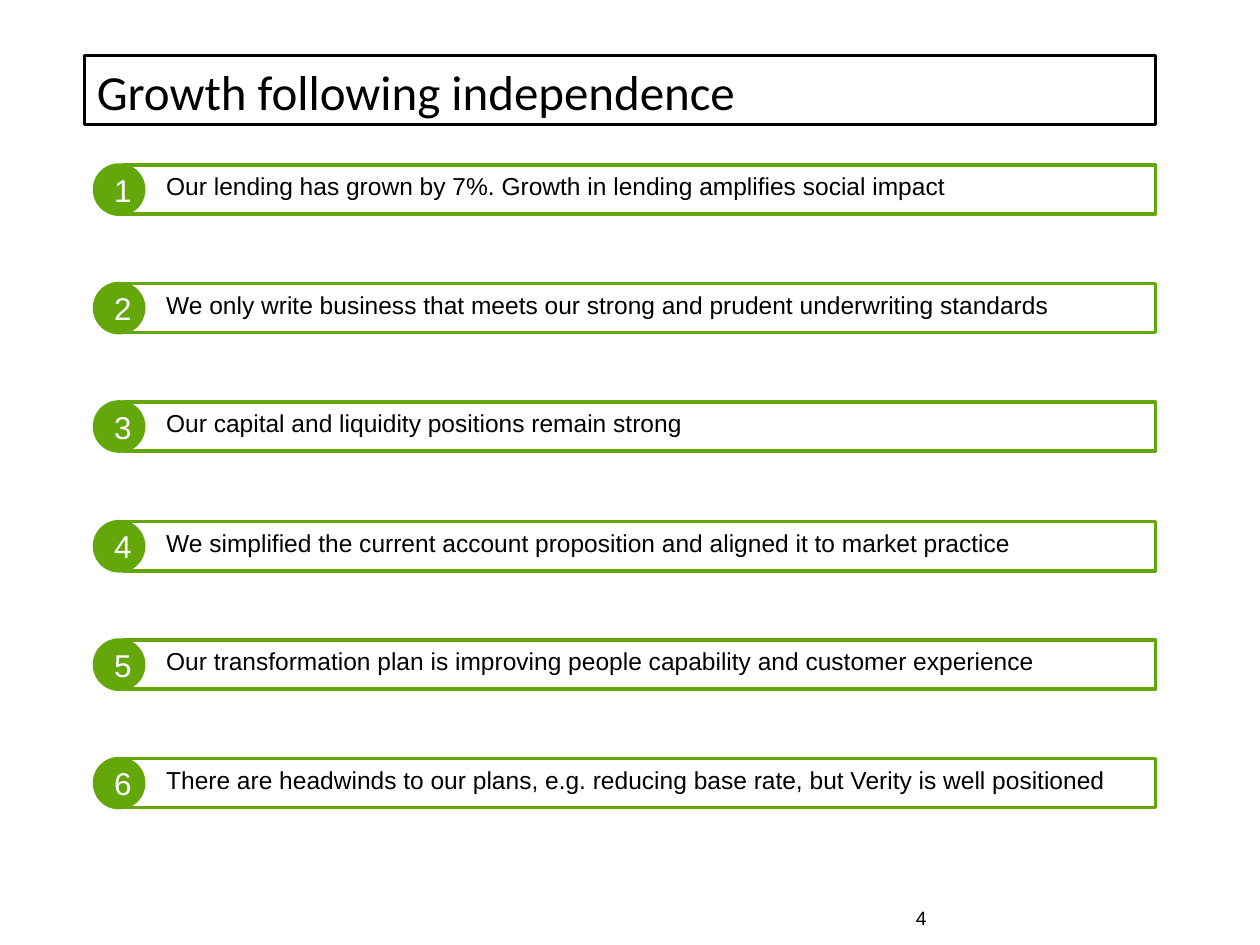
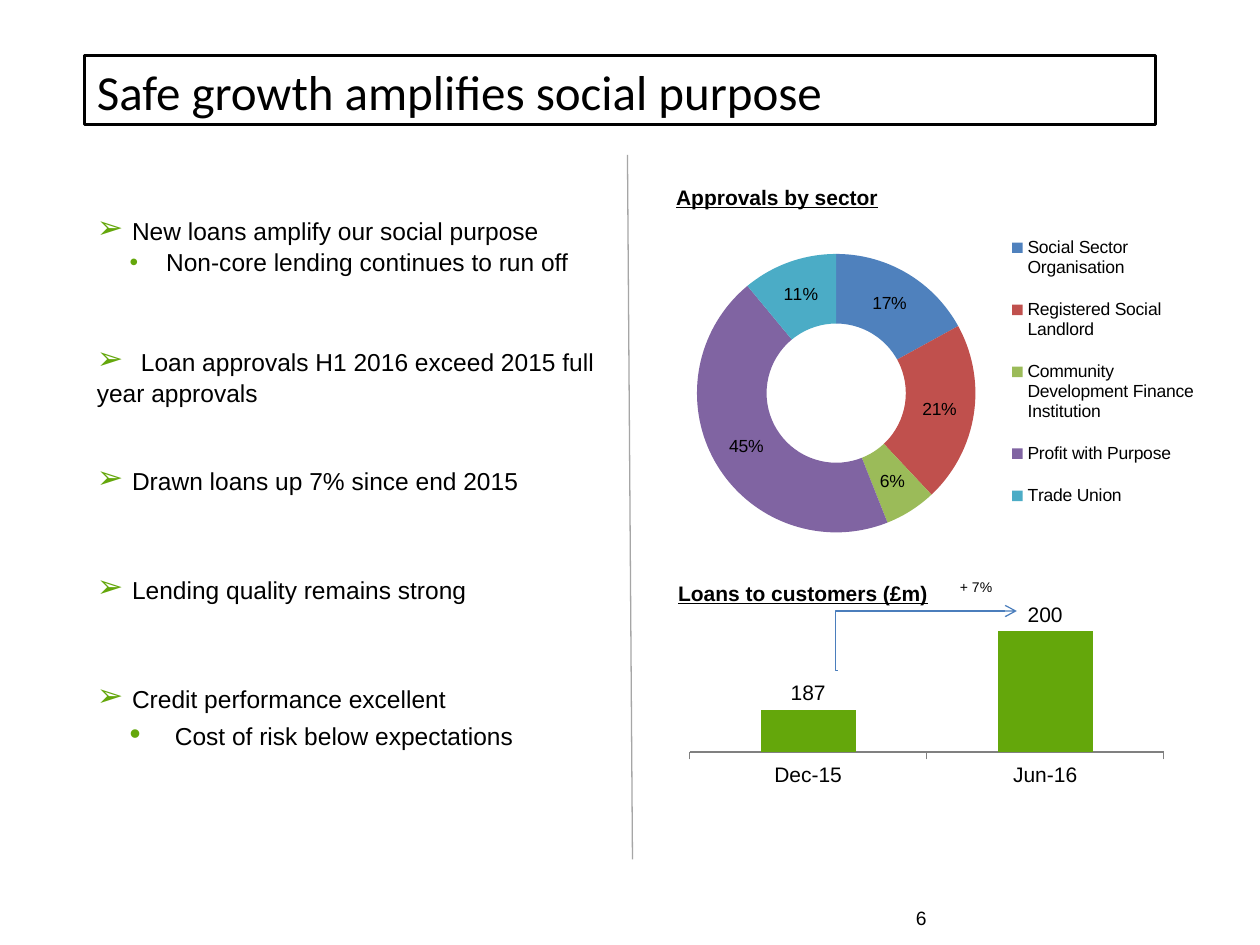
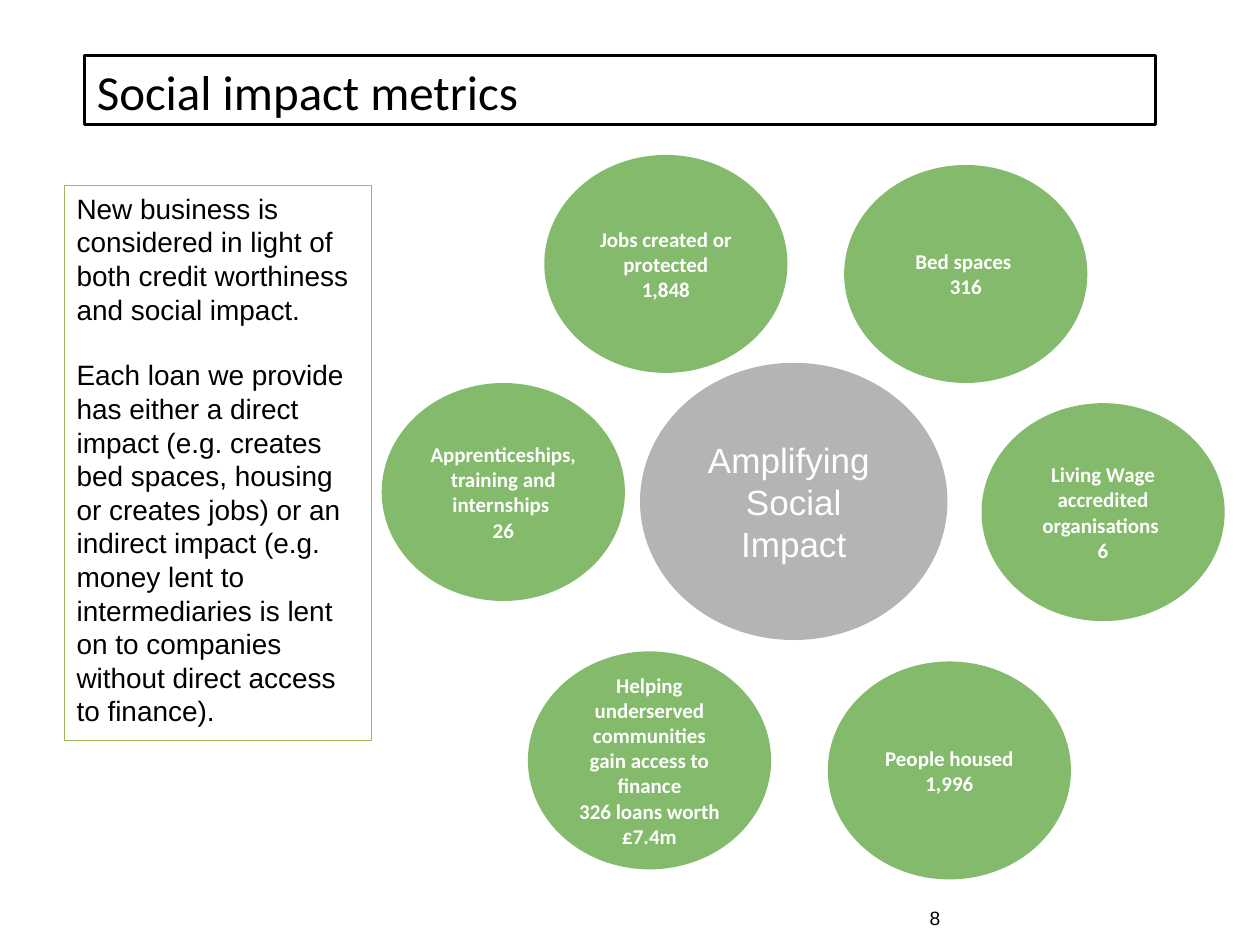
from pptx import Presentation
from pptx import util as u
from pptx.chart.data import CategoryChartData
from pptx.dml.color import RGBColor
from pptx.enum import chart as charts, shapes, text
from pptx.oxml.ns import qn
from pptx.oxml.xmlchemy import OxmlElement

EMU_PER_PX = 9144  # 100 px to the inch

BLACK = RGBColor(0x00, 0x00, 0x00)
WHITE = RGBColor(0xFF, 0xFF, 0xFF)
GREEN = RGBColor(0x64, 0xA7, 0x0B)
BUBBLE_GREEN = RGBColor(0x63, 0xA8, 0x44)
BUBBLE_GREY = RGBColor(0xA7, 0xA8, 0xAA)
FRAME_GREEN = RGBColor(0x9B, 0xBB, 0x59)
DIVIDER_GREY = RGBColor(0xA6, 0xA6, 0xA6)
AXIS_GREY = RGBColor(0x80, 0x80, 0x80)
ARROW_BLUE = RGBColor(0x4B, 0x7E, 0xBC)
SECTOR_COLOURS = [
    RGBColor(0x4F, 0x81, 0xBD),
    RGBColor(0xC0, 0x50, 0x4D),
    RGBColor(0x9B, 0xBB, 0x59),
    RGBColor(0x80, 0x64, 0xA2),
    RGBColor(0x4B, 0xAC, 0xC6),
]

RECTANGLE = shapes.MSO_SHAPE.RECTANGLE
OVAL = shapes.MSO_SHAPE.OVAL
CENTER = text.PP_ALIGN.CENTER
MIDDLE = text.MSO_ANCHOR.MIDDLE


def px(length):
    return u.Emu(round(length * EMU_PER_PX))


def add_element(parent, tag, **attributes):
    element = OxmlElement(tag)
    for name, value in attributes.items():
        element.set(name, str(value))
    parent.append(element)
    return element


def place_in_chart(parent, index, x, y, width=None, height=None, inner=False):
    """Give a chart part a manual layout in fractions of the chart area."""
    for old_layout in parent.findall(qn("c:layout")):
        parent.remove(old_layout)
    layout = OxmlElement("c:layout")
    manual = add_element(layout, "c:manualLayout")
    if inner:
        add_element(manual, "c:layoutTarget", val="inner")
    add_element(manual, "c:xMode", val="edge")
    add_element(manual, "c:yMode", val="edge")
    for tag, value in (("x", x), ("y", y), ("w", width), ("h", height)):
        if value is not None:
            add_element(manual, f"c:{tag}", val=value)
    parent.insert(index, layout)


class Deck:
    body_font = "Arial"
    title_font = "Calibri"

    def __init__(self):
        self.presentation = Presentation()
        self.presentation.slide_width = px(1000)
        self.presentation.slide_height = px(750)
        self.slide = None

    def new_slide(self, title, number, number_left=717):
        self.slide = self.presentation.slides.add_slide(self.presentation.slide_layouts[6])
        bar = self.shape(RECTANGLE, 67, 44, 850, 55, fill=WHITE, line=BLACK)
        self.fill_text(bar, [title], 28, font=self.title_font)
        self.text_box(number_left, 714, 233, 21, [number], 11)

    def run(self, paragraph, words, size, colour=BLACK, font=body_font, bold=False):
        run = paragraph.add_run()
        run.text = words
        run.font.size = u.Pt(size)
        run.font.name = font
        run.font.bold = bold
        run.font.color.rgb = colour

    def fill_text(self, shape, lines, size, align=text.PP_ALIGN.LEFT,
                  anchor=text.MSO_ANCHOR.TOP, gap=0, **style):
        frame = shape.text_frame
        frame.word_wrap = True
        frame.vertical_anchor = anchor
        for index, line in enumerate(lines):
            paragraph = frame.add_paragraph() if index else frame.paragraphs[0]
            paragraph.alignment = align
            if index and gap:
                paragraph.space_before = u.Pt(gap)
            self.run(paragraph, line, size, **style)

    def shape(self, kind, left, top, width, height, fill=None, line=None,
              line_width=2, opacity=None):
        shape = self.slide.shapes.add_shape(kind, px(left), px(top), px(width), px(height))
        shape.shadow.inherit = False
        if fill is None:
            shape.fill.background()
        else:
            shape.fill.solid()
            shape.fill.fore_color.rgb = fill
        if opacity is not None:
            colour = shape._element.spPr.find(".//" + qn("a:srgbClr"))
            add_element(colour, "a:alpha", val=opacity * 1000)
        if line is None:
            shape.line.fill.background()
        else:
            shape.line.color.rgb = line
            shape.line.width = u.Pt(line_width)
        return shape

    def text_box(self, left, top, width, height, lines, size):
        box = self.slide.shapes.add_textbox(px(left), px(top), px(width), px(height))
        self.fill_text(box, lines, size)
        return box

    def bubble(self, left, top, width, height, lines, size, fill, opacity, **style):
        oval = self.shape(OVAL, left, top, width, height, fill=fill, opacity=opacity)
        self.fill_text(oval, lines, size, align=CENTER, anchor=MIDDLE, colour=WHITE, **style)

    def numbered_bar(self, top, number, words):
        self.shape(RECTANGLE, 98, top, 819, 39, line=GREEN)
        badge = self.shape(OVAL, 75, top, 39, 39, fill=GREEN, line=GREEN)
        self.fill_text(badge, [number], 18, align=CENTER, anchor=MIDDLE, colour=WHITE)
        self.text_box(122, top, 795, 34, [words], 14)

    def bullet(self, paragraph, mark, left=0, indent=0, tab=None):
        properties = paragraph._p.get_or_add_pPr()
        properties.set("marL", str(px(left)))
        properties.set("indent", str(px(indent)))
        colour = add_element(properties, "a:buClr")
        add_element(colour, "a:srgbClr", val=GREEN)
        add_element(properties, "a:buFont", typeface=self.body_font)
        add_element(properties, "a:buChar", char=mark)
        if tab is not None:
            stops = add_element(properties, "a:tabLst")
            add_element(stops, "a:tab", pos=px(tab), algn="l")

    def point(self, top, height, words, tab=28, detail=None, detail_lead=""):
        """Add an arrow point, with an optional detail line below it."""
        box = self.slide.shapes.add_textbox(px(67), px(top), px(417), px(height))
        frame = box.text_frame
        frame.word_wrap = True
        paragraph = frame.paragraphs[0]
        self.bullet(paragraph, "➢", tab=tab)
        self.run(paragraph, "\t", 18)
        self.run(paragraph, words, 14)
        if detail:
            paragraph = frame.add_paragraph()
            self.bullet(paragraph, "•", left=55, indent=-29)
            if detail_lead:
                self.run(paragraph, detail_lead, 18)
            self.run(paragraph, detail, 14)

    def connector(self, kind, begin, end, colour):
        line = self.slide.shapes.add_connector(kind, *map(px, begin + end))
        line.line.color.rgb = colour
        line.line.width = u.Pt(0.75)
        add_element(line._element.spPr, "a:effectLst")
        return line

    def elbow_arrow(self, begin, end, colour, bend):
        arrow = self.connector(shapes.MSO_CONNECTOR.ELBOW, begin, end, colour)
        properties = arrow._element.spPr
        guides = properties.find(".//" + qn("a:avLst"))
        add_element(guides, "a:gd", name="adj1", fmla=f"val {bend}")
        add_element(properties.find(qn("a:ln")), "a:tailEnd", type="arrow")

    def chart(self, kind, left, top, width, height, values, title, title_at, plot_at, size):
        data = CategoryChartData()
        data.categories = list(values)
        data.add_series("Series 1", list(values.values()))
        chart = self.slide.shapes.add_chart(
            kind, px(left), px(top), px(width), px(height), data).chart
        chart.font.name = self.body_font
        chart.font.size = u.Pt(size)
        chart.font.color.rgb = BLACK
        chart.has_title = True
        paragraph = chart.chart_title.text_frame.paragraphs[0]
        self.run(paragraph, title, 12, bold=True)
        paragraph.runs[0].font.underline = True
        place_in_chart(chart.chart_title._element, 1, *title_at)
        place_in_chart(chart._chartSpace.chart.plotArea, 0, *plot_at, inner=True)
        plot = chart.plots[0]
        plot.has_data_labels = True
        plot.data_labels.font.size = u.Pt(size)
        plot.data_labels.font.color.rgb = BLACK
        plot.data_labels.number_format_is_linked = False
        return chart

    def column_chart(self, *box, lowest, highest, **parts):
        chart = self.chart(charts.XL_CHART_TYPE.COLUMN_CLUSTERED, *box, size=12, **parts)
        chart.has_legend = False
        plot = chart.plots[0]
        plot.vary_by_categories = False
        plot.gap_width = 150
        plot.data_labels.show_value = True
        plot.data_labels.number_format = "#,##0"
        plot.data_labels.position = charts.XL_LABEL_POSITION.OUTSIDE_END
        fill = plot.series[0].format.fill
        fill.solid()
        fill.fore_color.rgb = GREEN
        values = chart.value_axis
        values.minimum_scale, values.maximum_scale = lowest, highest
        values.has_major_gridlines = False
        values.visible = False
        categories = chart.category_axis
        categories.major_tick_mark = charts.XL_TICK_MARK.OUTSIDE
        categories.format.line.color.rgb = AXIS_GREY
        categories.tick_labels.font.size = u.Pt(12)

    def doughnut_chart(self, *box, legend_at, colours, **parts):
        chart = self.chart(charts.XL_CHART_TYPE.DOUGHNUT, *box, size=10, **parts)
        chart.has_legend = True
        chart.legend.position = charts.XL_LEGEND_POSITION.RIGHT
        chart.legend.include_in_layout = False
        place_in_chart(chart.legend._element, 1, *legend_at)
        plot = chart.plots[0]
        plot.vary_by_categories = True
        plot.data_labels.show_value = False
        plot.data_labels.show_percentage = True
        plot.data_labels.number_format = "0%"
        for index, colour in enumerate(colours):
            fill = plot.series[0].points[index].format.fill
            fill.solid()
            fill.fore_color.rgb = colour


def add_growth_slide(deck):
    deck.new_slide("Growth following independence", "4")
    messages = [
        "Our lending has grown by 7%. Growth in lending amplifies social impact",
        "We only write business that meets our strong and prudent underwriting standards",
        "Our capital and liquidity positions remain strong",
        "We simplified the current account proposition and aligned it to market practice",
        "Our transformation plan is improving people capability and customer experience",
        "There are headwinds to our plans, e.g. reducing base rate, but Verity is well positioned",
    ]
    first_top, last_top = 131, 602
    step = (last_top - first_top) / (len(messages) - 1)
    for index, message in enumerate(messages):
        deck.numbered_bar(round(first_top + index * step), str(index + 1), message)


def add_lending_slide(deck):
    deck.new_slide("Safe growth amplifies social purpose", "6")
    deck.point(161, 64, "New loans amplify our social purpose",
               detail="Non-core lending continues to run off")
    deck.point(265, 64, "Loan approvals H1 2016 exceed 2015 full year approvals", tab=35)
    deck.point(359, 40, "Drawn loans up 7% since end 2015")
    deck.point(446, 40, "Lending quality remains strong")
    deck.point(532, 71, "Credit performance excellent",
               detail="Cost of risk below expectations", detail_lead=" ")
    deck.connector(shapes.MSO_CONNECTOR.STRAIGHT, (498, 123), (502, 682), DIVIDER_GREY)
    deck.doughnut_chart(
        516, 131, 441, 307,
        values={
            "Social Sector Organisation": 17,
            "Registered Social Landlord": 21,
            "Community Development Finance Institution": 6,
            "Profit with Purpose": 45,
            "Trade Union": 11,
        },
        title="Approvals by sector", title_at=(0.04, 0.04),
        plot_at=(0.08, 0.23, 0.51, 0.72),
        legend_at=(0.64, 0.13, 0.35, 0.81), colours=SECTOR_COLOURS)
    deck.column_chart(
        531, 454, 409, 181,
        values={"Dec-15": 187, "Jun-16": 200},
        title="Loans to customers (£m)", title_at=(0.01, 0.02),
        plot_at=(0.04, 0.26, 0.92, 0.53), lowest=180, highest=200)
    deck.elbow_arrow((665, 532), (807, 485), ARROW_BLUE, bend=-1200)
    growth = deck.text_box(752, 454, 47, 24, ["+ 7%"], 8)
    growth.text_frame.word_wrap = False


def add_impact_slide(deck):
    deck.new_slide("Social impact metrics", "8", number_left=728)
    deck.bubble(508, 288, 244, 220, ["Amplifying ", "Social", "Impact"], 20, BUBBLE_GREY, 86)
    metrics = [
        (432, 123, "Jobs created or protected", "1,848"),
        (670, 131, "Bed spaces ", "316"),
        (779, 320, "Living Wage accredited organisations ", "6"),
        (657, 525, "People housed", "1,996"),
        (419, 517, "Helping underserved communities gain access to finance",
         "326 loans worth £7.4m"),
        (303, 304, "Apprenticeships, training and internships ", "26"),
    ]
    for left, top, label, value in metrics:
        deck.bubble(left, top, 193, 173, [label, value], 12, BUBBLE_GREEN, 79,
                    font=deck.title_font, bold=True)
    policy = deck.shape(RECTANGLE, 51, 147, 244, 441, line=FRAME_GREEN, line_width=0.75)
    deck.fill_text(policy, [
        "New business is considered in light of both credit worthiness and social impact.",
        "Each loan we provide has either a direct impact (e.g. creates bed spaces, housing "
        "or creates jobs) or an indirect impact (e.g. money lent to intermediaries is lent "
        "on to companies without direct access to finance).",
    ], 16, gap=18.4)


def main():
    deck = Deck()
    add_growth_slide(deck)
    add_lending_slide(deck)
    add_impact_slide(deck)
    deck.presentation.save("out.pptx")


if __name__ == "__main__":
    main()
